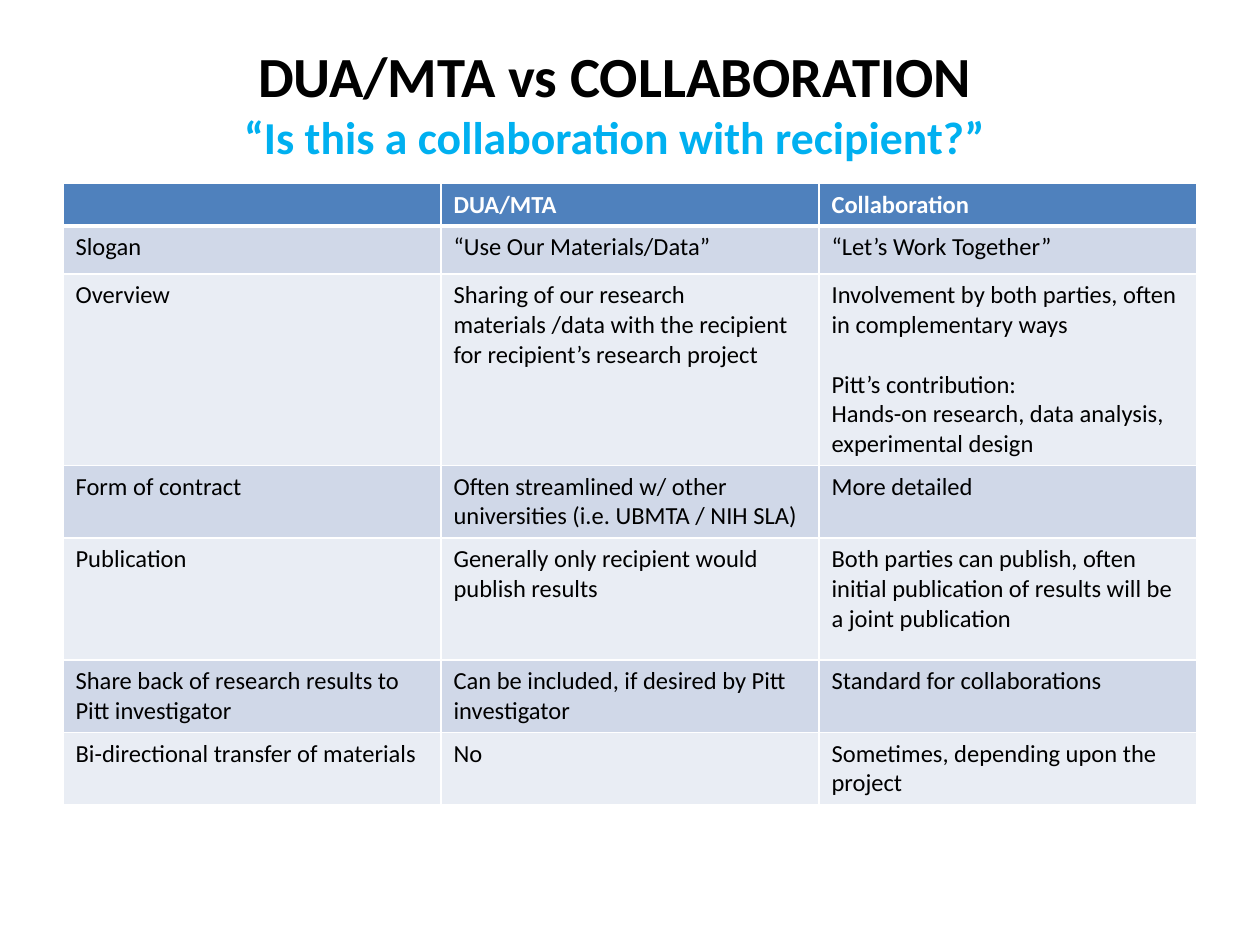
"""Build a slide comparing DUA/MTA agreements with collaborations."""
import dataclasses

import lxml.etree
import pptx
import pptx.dml.color
import pptx.enum.text
import pptx.oxml.ns
import pptx.util


@dataclasses.dataclass(frozen=True)
class Theme:
    """Hold the font, type sizes and colours of the slide."""

    font: str = "Calibri"
    title_size: float = 32.4
    subtitle_size: float = 26.1
    table_size: float = 14
    black: str = "000000"
    white: str = "FFFFFF"
    accent: str = "00B0F0"
    header: str = "4F81BD"
    bands: tuple = ("D0D8E8", "E9EDF4")


THEME = Theme()
TITLE = "DUA/MTA vs COLLABORATION"
SUBTITLE = "“Is this a collaboration with recipient?”"
COLUMN_WIDTH = 216
ROW_HEIGHTS = (23.04, 27.4, 109.4, 41.4, 69.8, 41.4, 41.4)
PARAGRAPH_GAP = 17.1
ROWS = (
    ("", "DUA/MTA", "Collaboration"),
    ("Slogan", "“Use Our Materials/Data”", "“Let’s Work Together”"),
    ("Overview",
     "Sharing of our research materials /data with the recipient for recipient’s research project",
     "Involvement by both parties, often in complementary ways\n"
     "Pitt’s contribution:\n"
     "Hands-on research, data analysis, experimental design"),
    ("Form of contract",
     "Often streamlined w/ other universities (i.e. UBMTA / NIH SLA)",
     "More detailed"),
    ("Publication",
     "Generally only recipient would publish results",
     "Both parties can publish, often initial publication of results will be a joint publication"),
    ("Share back of research results to Pitt investigator",
     "Can be included, if desired by Pitt investigator",
     "Standard for collaborations"),
    ("Bi-directional transfer of materials",
     "No",
     "Sometimes, depending upon the project"),
)


def format_font(font, size, color, bold):
    """Apply the theme font with a size, colour and weight."""
    font.name = THEME.font
    font.size = pptx.util.Pt(size)
    font.bold = bold
    font.color.rgb = pptx.dml.color.RGBColor.from_string(color)


def add_title(slide):
    """Add the centred title with its subtitle on a second line."""
    points = pptx.util.Pt
    shape = slide.shapes.add_textbox(points(18.72), points(21.6), points(665.28), points(74.16))
    text_frame = shape.text_frame
    text_frame.word_wrap = True
    text_frame.vertical_anchor = pptx.enum.text.MSO_ANCHOR.MIDDLE
    paragraph = text_frame.paragraphs[0]
    paragraph.text = f"{TITLE}\v{SUBTITLE}"
    paragraph.alignment = pptx.enum.text.PP_ALIGN.CENTER
    title, subtitle = paragraph.runs
    format_font(title.font, THEME.title_size, THEME.black, True)
    format_font(subtitle.font, THEME.subtitle_size, THEME.accent, True)


def set_borders(cell, top, bottom):
    """Draw white cell borders, with the top and bottom widths in points."""
    properties = cell._tc.get_or_add_tcPr()
    qualify = pptx.oxml.ns.qn
    for side, width in (("L", 1), ("R", 1), ("T", top), ("B", bottom)):
        line = lxml.etree.SubElement(
            properties, qualify(f"a:ln{side}"), w=str(pptx.util.Pt(width)))
        fill = lxml.etree.SubElement(line, qualify("a:solidFill"))
        lxml.etree.SubElement(fill, qualify("a:srgbClr"), val=THEME.white)


def fill_cell(cell, text, row_index):
    """Write and style one cell according to its row."""
    is_header = row_index == 0
    set_borders(cell, 3 if row_index == 1 else 1, 3 if is_header else 1)
    color = THEME.header if is_header else THEME.bands[(row_index - 1) % 2]
    cell.fill.solid()
    cell.fill.fore_color.rgb = pptx.dml.color.RGBColor.from_string(color)
    cell.text_frame.text = text
    for paragraph in cell.text_frame.paragraphs:
        format_font(paragraph.font, THEME.table_size,
                    THEME.white if is_header else THEME.black, is_header)
        for run in paragraph.runs:
            format_font(run.font, THEME.table_size,
                        THEME.white if is_header else THEME.black, is_header)
    if len(cell.text_frame.paragraphs) > 1:
        cell.text_frame.paragraphs[1].space_before = pptx.util.Pt(PARAGRAPH_GAP)


def add_comparison_table(slide):
    """Add the comparison table with equal columns and banded rows."""
    points = pptx.util.Pt
    column_count = len(ROWS[0])
    table = slide.shapes.add_table(
        len(ROWS), column_count, points(36), points(104.88),
        points(COLUMN_WIDTH * column_count), points(sum(ROW_HEIGHTS))).table
    for column in table.columns:
        column.width = points(COLUMN_WIDTH)
    for row_index, (texts, height) in enumerate(zip(ROWS, ROW_HEIGHTS)):
        table.rows[row_index].height = points(height)
        for cell, text in zip(table.rows[row_index].cells, texts):
            fill_cell(cell, text, row_index)


def main():
    """Build and save the presentation."""
    presentation = pptx.Presentation()
    presentation.slide_width = pptx.util.Pt(720)
    presentation.slide_height = pptx.util.Pt(540)
    slide = presentation.slides.add_slide(presentation.slide_layouts[6])
    add_comparison_table(slide)
    add_title(slide)
    presentation.save("out.pptx")


if __name__ == "__main__":
    main()
